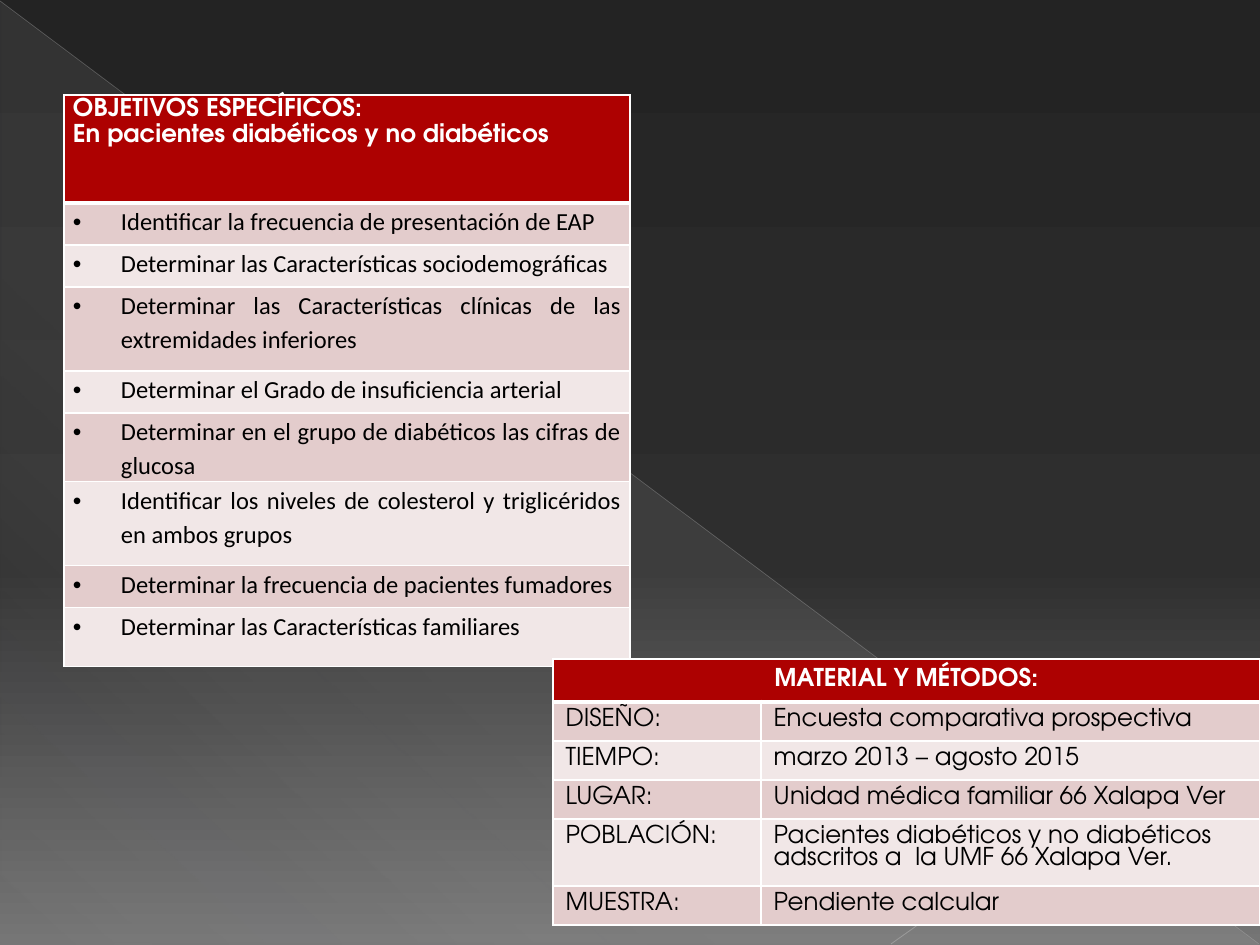
import pptx
import pptx.util
import pptx.dml.color
import pptx.enum.shapes
import pptx.enum.text
import pptx.oxml
import pptx.oxml.ns

ALIGN = pptx.enum.text.PP_ALIGN
HEADING_FONT, LIST_FONT = "TeX Gyre Adventor", "Calibri"
RED, WHITE, BLACK = "AD0101", "FFFFFF", "000000"
BANDS = ("E3CCCC", "F1E7E7")

BACKGROUND = [(0, "232323", 100), (60, "2E2E2E", 100), (100, "757575", 100)]
GLOW = [(0, "DEDEE0", 10), (70, "DEDEE0", 8), (100, "DEDEE0", 1)]
# start, end, colour, width in points, opacity in percent
RAYS = [
    ((0, 1), (1259, 944), "B6B6B6", 0.39, 35),
    ((1260, 682), (891, 944), "BEBEBE", 0.47, 45),
]

GOALS_HEADING = ["OBJETIVOS ESPECÍFICOS:", "En pacientes diabéticos y no diabéticos"]
GOALS = [  # text, row height
    ("Identificar la frecuencia de presentación de EAP ", 42),
    ("Determinar las Características sociodemográficas ", 42),
    ("Determinar las Características clínicas de las extremidades inferiores", 84),
    ("Determinar el Grado de insuficiencia arterial ", 42),
    ("Determinar en el grupo de diabéticos las cifras de glucosa", 42),
    ("Identificar los niveles de colesterol y triglicéridos en ambos grupos", 84),
    ("Determinar la frecuencia de pacientes fumadores", 42),
    ("Determinar las Características familiares", 59),
]
METHODS_HEADING = "MATERIAL Y MÉTODOS:"
METHODS = [  # label, text, row height
    ("DISEÑO:", "Encuesta comparativa prospectiva", 39),
    ("TIEMPO:", "marzo 2013 – agosto 2015", 39),
    ("LUGAR:", "Unidad médica familiar 66 Xalapa Ver", 39),
    ("POBLACIÓN:", "Pacientes diabéticos y no diabéticos  adscritos a  la UMF 66 Xalapa Ver.", 67),
    ("MUESTRA:", "Pendiente calcular", 39),
]


def px(length):
    return pptx.util.Emu(round(length * 914400 / 126))


def rgb(text):
    return pptx.dml.color.RGBColor.from_string(text)


def xml(tag, inner="", attributes=""):
    return pptx.oxml.parse_xml(
        f'<a:{tag} {pptx.oxml.ns.nsdecls("a")} {attributes}>{inner}</a:{tag}>')


def colour_xml(colour, opacity):
    return f'<a:srgbClr val="{colour}"><a:alpha val="{opacity * 1000}"/></a:srgbClr>'


def set_gradient(properties, stops, angle):
    """Swap the solid fill in a properties element for a gradient."""
    marks = "".join(f'<a:gs pos="{at * 1000}">{colour_xml(colour, opacity)}</a:gs>'
                    for at, colour, opacity in stops)
    solid = properties.find(pptx.oxml.ns.qn("a:solidFill"))
    properties.replace(solid, xml(
        "gradFill", f'<a:gsLst>{marks}</a:gsLst><a:lin ang="{angle * 60000}" scaled="0"/>'))


def draw_backdrop(page):
    page.background.fill.solid()
    background = next(page.element.iter(pptx.oxml.ns.qn("p:bgPr")))
    set_gradient(background, BACKGROUND, 90)

    triangle = page.shapes.add_shape(
        pptx.enum.shapes.MSO_SHAPE.RIGHT_TRIANGLE, px(1), px(2), px(1258), px(942))
    triangle.shadow.inherit = False
    triangle.line.fill.background()
    triangle.fill.solid()
    set_gradient(triangle.element.spPr, GLOW, 133)

    for start, end, colour, width, opacity in RAYS:
        ray = page.shapes.add_connector(
            pptx.enum.shapes.MSO_CONNECTOR.STRAIGHT, *map(px, start + end))
        ray.line.width = pptx.util.Pt(width)
        ray.line.color.rgb = rgb(colour)
        shade = next(ray.element.spPr.iter(pptx.oxml.ns.qn("a:srgbClr")))
        shade.append(xml("alpha", attributes=f'val="{opacity * 1000}"'))
        ray.element.spPr.append(xml("effectLst"))


def add_table(page, left, top, widths, heights):
    """Add a table with a red first row, banded rows and white borders."""
    table = page.shapes.add_table(len(heights), len(widths), px(left), px(top),
                                  px(sum(widths)), px(sum(heights))).table
    for column, width in zip(table.columns, widths):
        column.width = px(width)
    for index, (row, height) in enumerate(zip(table.rows, heights)):
        row.height = px(height)
        for cell in row.cells:
            cell.fill.solid()
            cell.fill.fore_color.rgb = rgb(BANDS[(index - 1) % 2] if index else RED)
            points = {"lnL": 1, "lnR": 1, "lnT": 3 if index == 1 else 1,
                      "lnB": 1 if index else 3}
            for place, (side, width) in enumerate(points.items()):
                cell._tc.tcPr.insert(place, xml(
                    side, f"<a:solidFill>{colour_xml(WHITE, 100)}</a:solidFill>",
                    f'w="{width * 12700}"'))
    return table


def write(cell, lines, font, colour=BLACK, bold=False, bullet=False, **layout):
    frame = cell.text_frame
    for index, line in enumerate(lines):
        para = frame.add_paragraph() if index else frame.paragraphs[0]
        for name, value in layout.items():
            setattr(para, name, value)
        span = para.add_run()
        span.text = line
        values = {"name": font, "size": pptx.util.Pt(14), "bold": bold}
        for name, value in values.items():
            setattr(span.font, name, value)
        span.font.color.rgb = rgb(colour)
        if bullet:
            properties = para._p.get_or_add_pPr()
            properties.set("marL", str(px(48)))
            properties.set("indent", str(-px(48)))
            properties.append(xml("buFont", attributes='typeface="Arial"'))
            properties.append(xml("buChar", attributes='char="•"'))


def add_goals(page):
    table = add_table(page, 64, 95, [566], [108] + [height for _, height in GOALS])
    layout = {"alignment": ALIGN.JUSTIFY, "line_spacing": 1.15}
    margins = {"margin_left": px(9), "margin_right": px(9),
               "margin_top": 0, "margin_bottom": 0}
    for cell in table.iter_cells():
        for name, value in margins.items():
            setattr(cell, name, value)
    write(table.cell(0, 0), GOALS_HEADING, HEADING_FONT, WHITE, True, **layout)
    for row, (goal, _) in enumerate(GOALS, 1):
        write(table.cell(row, 0), [goal], LIST_FONT, bullet=True, **layout)


def add_methods(page):
    table = add_table(page, 553, 659, [208, 499], [43] + [entry[-1] for entry in METHODS])
    table.cell(0, 0).merge(table.cell(0, 1))
    write(table.cell(0, 0), [METHODS_HEADING], HEADING_FONT, WHITE, True,
          alignment=ALIGN.CENTER, line_spacing=1.15, space_after=pptx.util.Pt(10))
    for row, (label, text, _) in enumerate(METHODS, 1):
        for column, words in enumerate((label, text)):
            write(table.cell(row, column), [words], HEADING_FONT)


def main():
    deck = pptx.Presentation()
    deck.slide_width, deck.slide_height = px(1260), px(945)
    page = deck.slides.add_slide(deck.slide_layouts[6])
    draw_backdrop(page)
    add_goals(page)
    add_methods(page)
    deck.save("out.pptx")


if __name__ == "__main__":
    main()
